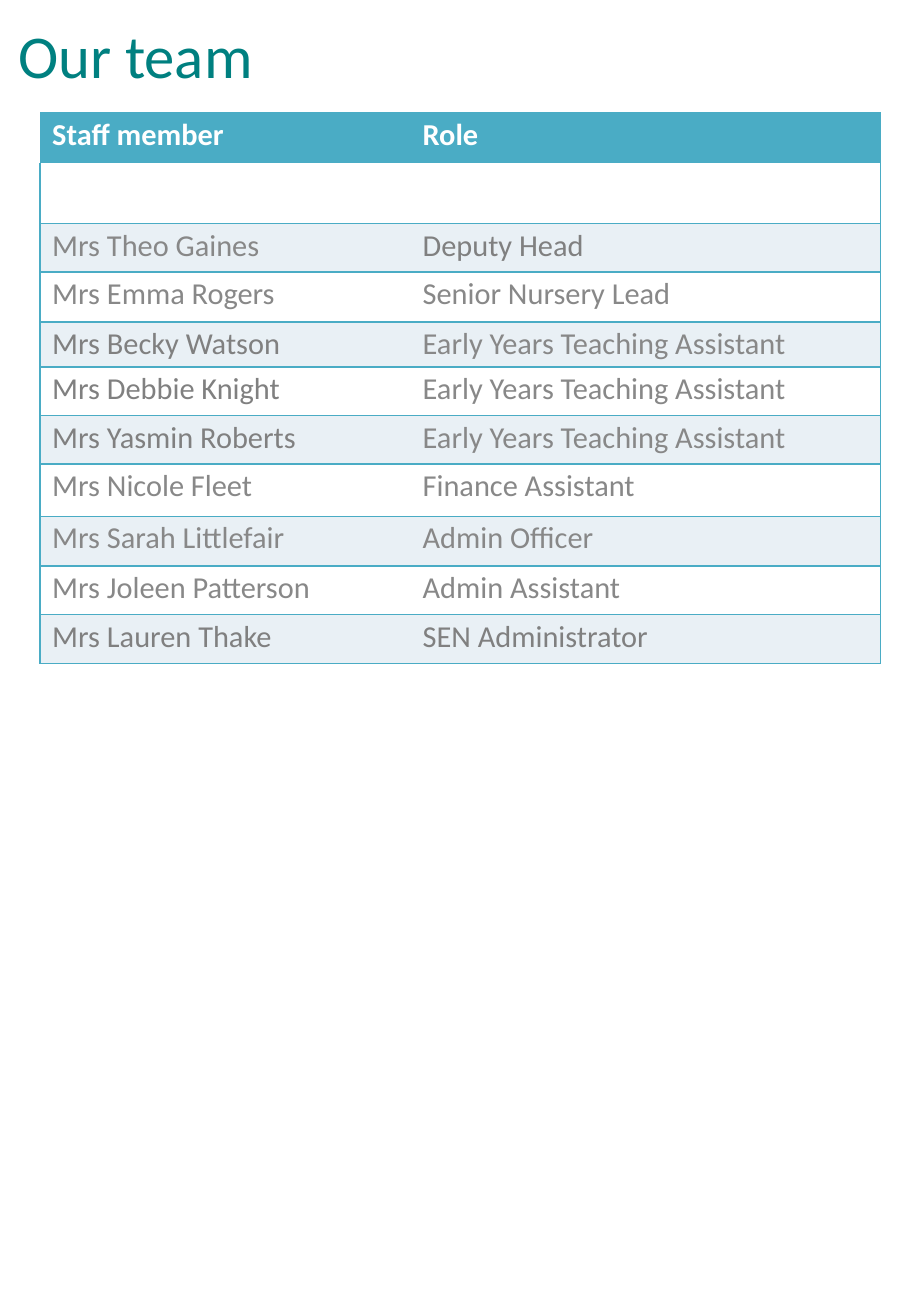
from lxml.etree import SubElement
from pptx import Presentation
from pptx.dml.color import RGBColor
from pptx.enum.text import MSO_ANCHOR
from pptx.oxml.ns import qn
from pptx.util import Inches, Pt

COLS, ROWS = 750, 1083
UNIT = Inches(0.01)
TEAL = RGBColor(0x00, 0x80, 0x80)
AQUA = RGBColor(0x4A, 0xAC, 0xC5)
PALE = RGBColor(0xE9, 0xF0, 0xF5)
WHITE = RGBColor(0xFF, 0xFF, 0xFF)
GREY = RGBColor(0x88, 0x88, 0x88)
DARK = RGBColor(0x80, 0x80, 0x80)

TITLE = {"name": "Calibri", "size": Pt(36), "bold": False}
HEAD = {"name": "Calibri", "size": Pt(18), "bold": True}
BODY = {**HEAD, "bold": False}
WIDTHS = (291, 401)
INDENTS = (10, 24)
STAFF = (
    (42, "Staff member", WHITE, "Role", WHITE),
    (50, "", GREY, "", GREY),
    (40, "Mrs Theo Gaines", GREY, "Deputy Head", DARK),
    (41, "Mrs Emma Rogers", GREY, "Senior Nursery Lead", GREY),
    (37, "Mrs Becky Watson", DARK, "Early Years Teaching Assistant", GREY),
    (40, "Mrs Debbie Knight", DARK, "Early Years Teaching Assistant", GREY),
    (40, "Mrs Yasmin Roberts", DARK, "Early Years Teaching Assistant", GREY),
    (43, "Mrs Nicole Fleet", GREY, "Finance Assistant", GREY),
    (41, "Mrs Sarah Littlefair", GREY, "Admin Officer", GREY),
    (40, "Mrs Joleen Patterson", GREY, "Admin Assistant", GREY),
    (40, "Mrs Lauren Thake", DARK, "SEN Administrator", DARK),
)


def style(item, values):
    for key, value in values.items():
        setattr(item, key, value)


def write(frame, text, look, color, indent, before):
    para = frame.paragraphs[0]
    para.space_before = Pt(before)
    para._p.get_or_add_pPr().set("marL", str(indent * UNIT))
    if text:
        run = para.add_run()
        run.text = text
        style(run.font, look)
        run.font.color.rgb = color
    else:
        style(para.font, look)


def edge(cell, sides):
    props = cell._tc.get_or_add_tcPr()
    for side in "LRTB":
        line = SubElement(props, qn(f"a:ln{side}"), w=str(Pt(1)))
        if side in sides:
            fill = SubElement(line, qn("a:solidFill"))
            SubElement(fill, qn("a:srgbClr"), val=str(AQUA))
        else:
            SubElement(line, qn("a:noFill"))


def add_title(slide, box):
    frame = slide.shapes.add_textbox(*(n * UNIT for n in box)).text_frame
    style(frame, {"margin_left": 0, "margin_right": 0, "margin_top": UNIT,
                  "margin_bottom": 0, "word_wrap": True})
    write(frame, "Our team", TITLE, TEAL, 1, 1)


def add_staff(slide, box):
    shape = slide.shapes.add_table(len(STAFF), len(WIDTHS), *(n * UNIT for n in box))
    table = shape.table
    style(table, {"first_row": False, "horz_banding": False})
    for col, width in zip(table.columns, WIDTHS):
        col.width = width * UNIT
    for r, (height, *parts) in enumerate(STAFF):
        table.rows[r].height = height * UNIT
        fill = AQUA if r == 0 else WHITE if r % 2 else PALE
        for c, indent in enumerate(INDENTS):
            cell = table.cell(r, c)
            text, color = parts[2 * c:2 * c + 2]
            style(cell, {"margin_left": 0, "margin_right": 0, "margin_bottom": 0,
                         "margin_top": (3 if r else 4) * UNIT,
                         "vertical_anchor": MSO_ANCHOR.TOP})
            write(cell.text_frame, text, BODY if r else HEAD, color, indent,
                  2.4 if r else 2.9)
            edge(cell, "LR"[c] + ("TB" if r > 1 else "B") if r else "")
            cell.fill.solid()
            cell.fill.fore_color.rgb = fill


def main():
    deck = Presentation()
    style(deck, {"slide_width": COLS * UNIT, "slide_height": ROWS * UNIT})
    slide = deck.slides.add_slide(deck.slide_layouts[6])
    add_title(slide, (14, 14, 196, 63))
    add_staff(slide, (33, 92, sum(WIDTHS), sum(row[0] for row in STAFF)))
    deck.save("out.pptx")


if __name__ == "__main__":
    main()
